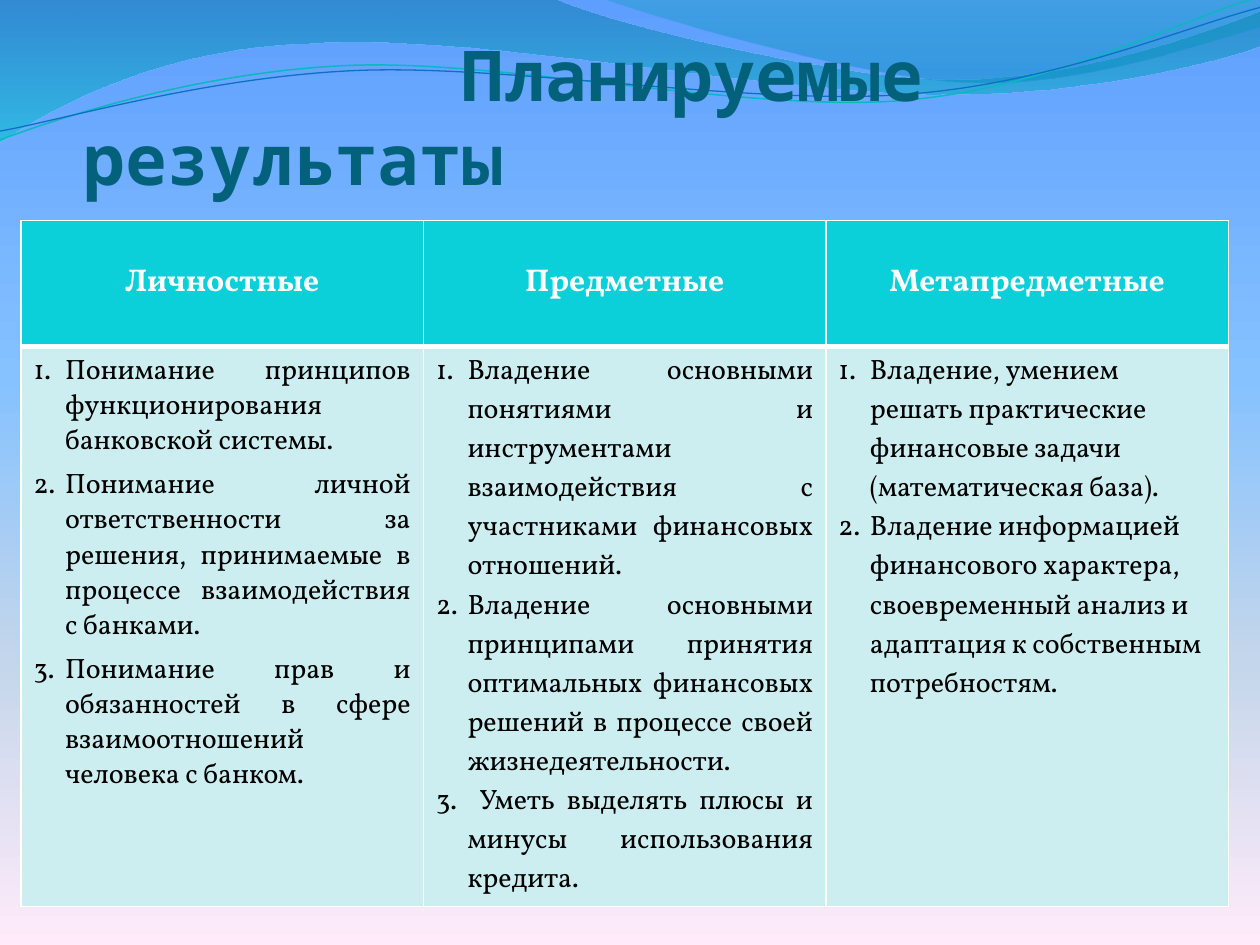
import math
from dataclasses import dataclass
from typing import Optional

from lxml import etree
from pptx import Presentation
from pptx import util as u
from pptx.dml.color import RGBColor
from pptx.enum import text
from pptx.oxml import ns

COLORS = {
    "title": "04617B", "header": "0BD0D9", "body": "CCEEF1",
    "white": "FFFFFF", "black": "000000",
    "teal_line": "0AB8BF", "blue_line": "0F6FC6",
    "wave_blue": "0074A1", "wave_cyan": "00C6CF",
    "crest_teal": "00A1A9", "crest_blue": "008BBF",
    "sky_top": "5E9EFF", "sky": "85C2FF", "haze": "C4D6EB", "pink": "FFEBFA",
}
TITLE_FONT, BODY_FONT = "Noto Sans Mono", "Vollkorn"
TILT = 2.7


@dataclass(frozen=True)
class Stop:
    pos: int
    color: str
    alpha: int = 100


@dataclass(frozen=True)
class Wave:
    start: tuple
    segments: list
    stops: Optional[list] = None
    line: Optional[str] = None
    width: float = 0
    pivot: Optional[tuple] = None


@dataclass(frozen=True)
class Column:
    heading: str
    items: list
    align: text.PP_ALIGN = text.PP_ALIGN.JUSTIFY
    spacing: Optional[float] = None
    before: Optional[float] = None


SKY = [Stop(0, "sky_top"), Stop(40, "sky"), Stop(70, "haze"), Stop(100, "pink")]

WAVES = [
    Wave((0, 0), [
        [(316.8, -0.7)],
        [(342.7, 12.2), (478.1, 45.4), (545.8, 45.4)],
        [(614.2, 45.4), (689.8, 18.7), (720, 6.5)],
        [(720.7, 25.9)],
        [(707.8, 31.7), (626.4, 54.7), (537.1, 54)],
        [(446.4, 54), (275, 20.2), (185, 24.5)],
        [(92.9, 25.9), (33.1, 59.8), (-0.7, 81.4)],
        [(0, 0)],
    ], [Stop(0, "wave_blue", 45), Stop(100, "wave_cyan", 55)]),
    Wave((344.9, -0.7), [
        [(366.5, 7.9), (491, 44.6), (553.7, 46.8)],
        [(616.3, 49.7), (691.9, 23), (720, 15.1)],
        [(720, 0)],
        [(344.9, -0.7)],
    ], [Stop(0, "crest_teal", 30), Stop(80, "crest_blue", 45)]),
    Wave((0, 79.9), [
        [(34.6, 67), (113.8, 41), (199.4, 37.4)],
        [(284.4, 33.8), (427, 64.1), (513.4, 57.6)],
        [(599.8, 51.1), (675.4, 10.8), (718.6, -1.4)],
    ], line="teal_line", width=0.85, pivot=(359.3, 41.4)),
    Wave((0, 74.9), [
        [(33.8, 69.1), (118.1, 43.9), (203.8, 40.3)],
        [(290.2, 36.7), (429.8, 60.5), (516.2, 54)],
        [(601.9, 48.2), (677.5, 15.1), (720, 4.3)],
    ], line="blue_line", width=0.75, pivot=(359.6, 42.5)),
]

COLUMNS = [
    Column("Личностные", [
        "Понимание принципов функционирования банковской системы.",
        "Понимание личной ответственности за решения, принимаемые в процессе взаимодействия с банками.",
        "Понимание прав и обязанностей в сфере взаимоотношений человека с банком.",
    ], spacing=0.9, before=5),
    Column("Предметные", [
        "Владение основными понятиями и инструментами взаимодействия с участниками финансовых отношений.",
        "Владение основными принципами принятия оптимальных финансовых решений в процессе своей жизнедеятельности.",
        " Уметь выделять плюсы и минусы использования кредита.",
    ]),
    Column("Метапредметные", [
        "Владение, умением решать практические финансовые задачи (математическая база).",
        "Владение информацией финансового характера, своевременный анализ и адаптация к собственным потребностям.",
    ], align=text.PP_ALIGN.LEFT),
]


def rgb(name: str) -> RGBColor:
    return RGBColor.from_string(COLORS[name])


def add_color(parent, name: str, alpha: int = 100) -> None:
    clr = etree.SubElement(parent, ns.qn("a:srgbClr"), val=COLORS[name])
    if alpha < 100:
        etree.SubElement(clr, ns.qn("a:alpha"), val=str(alpha * 1000))


def set_gradient(fill, holder, stops: list) -> None:
    fill.solid()
    solid = holder.find(ns.qn("a:solidFill"))
    grad = etree.Element(ns.qn("a:gradFill"), rotWithShape="1")
    gs_lst = etree.SubElement(grad, ns.qn("a:gsLst"))
    for stop in stops:
        gs = etree.SubElement(gs_lst, ns.qn("a:gs"), pos=str(stop.pos * 1000))
        add_color(gs, stop.color, stop.alpha)
    etree.SubElement(grad, ns.qn("a:lin"), ang=str(90 * 60000), scaled="0")
    holder.replace(solid, grad)


def level(point: tuple, pivot: Optional[tuple]) -> tuple:
    x, y = point
    if pivot:
        dx, dy = x - pivot[0], y - pivot[1]
        c, n = math.cos(math.radians(TILT)), math.sin(math.radians(TILT))
        x, y = pivot[0] + dx * c - dy * n, pivot[1] + dx * n + dy * c
    return u.Pt(x), u.Pt(y)


def bend(sp, segments: list) -> None:
    lines = list(sp.element.iter(ns.qn("a:lnTo")))
    at = 0
    for seg in segments:
        if len(seg) == 3:
            curve = etree.Element(ns.qn("a:cubicBezTo"))
            lines[at].addprevious(curve)
            for ln in lines[at:at + 3]:
                curve.append(ln[0])
                ln.getparent().remove(ln)
        at += len(seg)


def draw_wave(s, wave: Wave) -> None:
    builder = s.shapes.build_freeform(*level(wave.start, wave.pivot))
    points = [level(point, wave.pivot) for seg in wave.segments for point in seg]
    builder.add_line_segments(points, close=wave.stops is not None)
    sp = builder.convert_to_shape()
    bend(sp, wave.segments)
    sp.shadow.inherit = False
    if wave.stops:
        set_gradient(sp.fill, sp.element.spPr, wave.stops)
        sp.line.fill.background()
    else:
        sp.rotation = 360 - TILT
        sp.fill.background()
        sp.line.color.rgb = rgb(wave.line)
        sp.line.width = u.Pt(wave.width)


def add_run(p, content: str, font: str, size: float, color: str, bold: bool = False) -> None:
    r = p.add_run()
    r.text = content
    r.font.name, r.font.size, r.font.bold = font, u.Pt(size), bold
    r.font.color.rgb = rgb(color)


def set_indent(p, left: float, first: float) -> None:
    p_pr = p._p.get_or_add_pPr()
    p_pr.set("marL", str(u.Pt(left)))
    p_pr.set("indent", str(u.Pt(first)))


def draw_title(s) -> None:
    tf = s.shapes.add_textbox(u.Pt(48), u.Pt(42), u.Pt(600), u.Pt(72)).text_frame
    tf.word_wrap = True
    tf.vertical_anchor = text.MSO_ANCHOR.BOTTOM
    tf.margin_left = tf.margin_top = tf.margin_right = tf.margin_bottom = 0
    p = tf.paragraphs[0]
    set_indent(p, 0, 216)
    add_run(p, "Планируемые результаты", TITLE_FONT, 40, "title", True)


def style_cell(cell, fill: str, bottom: float) -> None:
    cell.fill.solid()
    cell.fill.fore_color.rgb = rgb(fill)
    tc_pr = cell._tc.get_or_add_tcPr()
    edges = (("a:lnL", 1), ("a:lnR", 1), ("a:lnT", 1), ("a:lnB", bottom))
    for i, (tag, width) in enumerate(edges):
        ln = etree.Element(ns.qn(tag), w=str(u.Pt(width)))
        add_color(etree.SubElement(ln, ns.qn("a:solidFill")), "white")
        tc_pr.insert(i, ln)


def fill_heading(cell, column: Column) -> None:
    style_cell(cell, "header", 3)
    cell.vertical_anchor = text.MSO_ANCHOR.MIDDLE
    p = cell.text_frame.paragraphs[0]
    p.alignment = text.PP_ALIGN.CENTER
    add_run(p, column.heading, BODY_FONT, 18, "white", True)


def fill_items(cell, column: Column) -> None:
    style_cell(cell, "body", 1)
    tf = cell.text_frame
    for i, item in enumerate(column.items):
        p = tf.add_paragraph() if i else tf.paragraphs[0]
        p.alignment, p.line_spacing = column.align, column.spacing
        p.space_before = u.Pt(column.before) if column.before else None
        set_indent(p, 18, -18)
        etree.SubElement(p._p.get_or_add_pPr(), ns.qn("a:buAutoNum"), type="arabicPeriod")
        add_run(p, item, BODY_FONT, 16, "black")


def draw_table(s) -> None:
    frame = s.shapes.add_table(2, len(COLUMNS), u.Pt(12), u.Pt(126), u.Pt(690), u.Pt(392))
    table = frame.table
    table.rows[0].height, table.rows[1].height = u.Pt(72), u.Pt(320)
    for i, column in enumerate(COLUMNS):
        fill_heading(table.cell(0, i), column)
        fill_items(table.cell(1, i), column)


def main() -> None:
    prs = Presentation()
    prs.slide_width, prs.slide_height = u.Pt(720), u.Pt(540)
    s = prs.slides.add_slide(prs.slide_layouts[6])
    fill = s.background.fill
    fill.solid()
    set_gradient(fill, s.element.find(".//" + ns.qn("p:bgPr")), SKY)
    for wave in WAVES:
        draw_wave(s, wave)
    draw_title(s)
    draw_table(s)
    prs.save("out.pptx")


if __name__ == "__main__":
    main()
